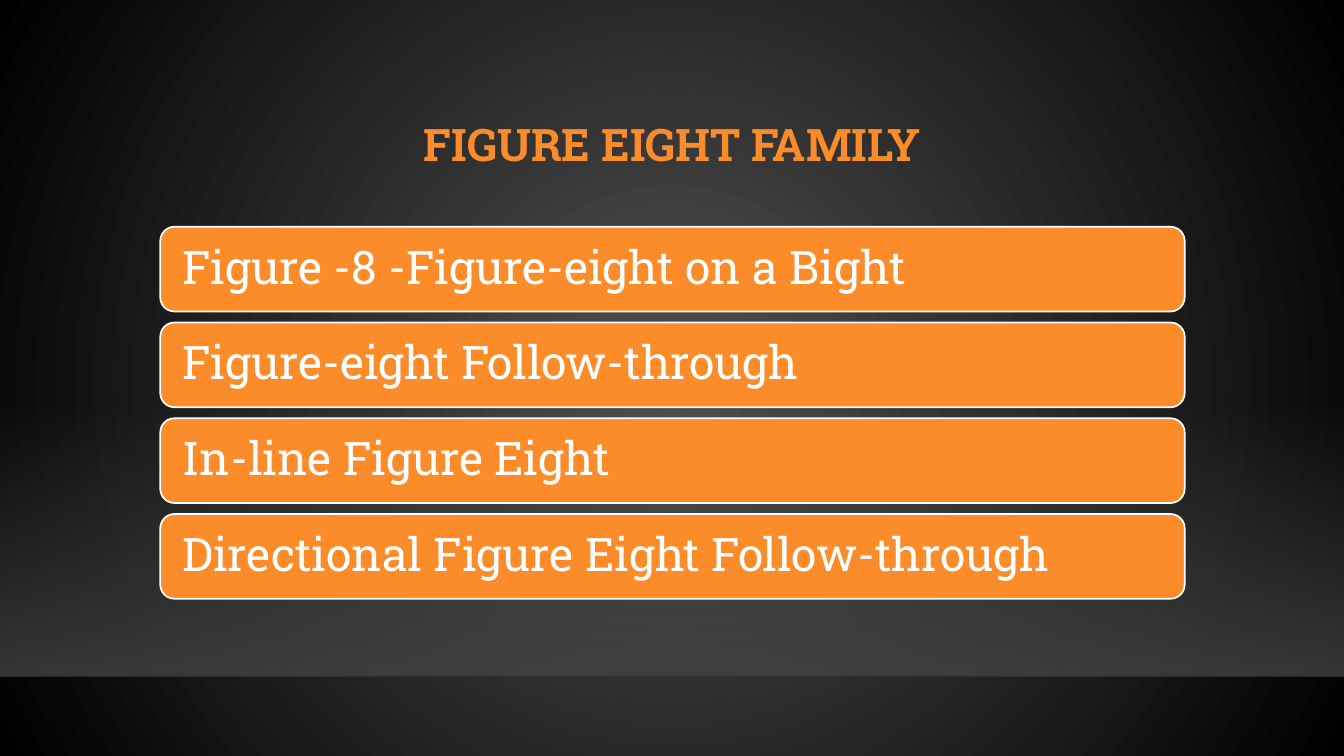
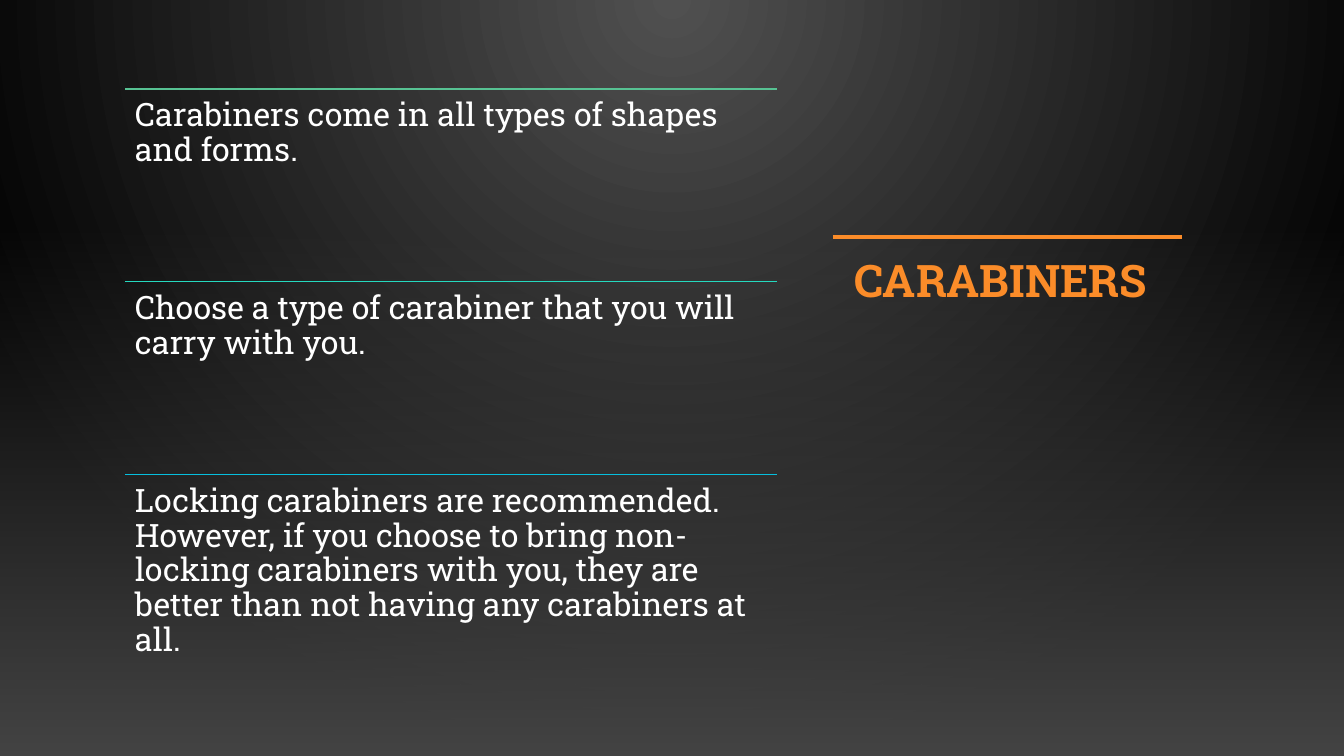
"""Build two dark slides on climbing knots and carabiners."""
from lxml import etree
from pptx import Presentation
from pptx.dml.color import RGBColor
from pptx.enum.shapes import MSO_CONNECTOR, MSO_SHAPE
from pptx.enum.text import MSO_ANCHOR, PP_ALIGN
from pptx.oxml import parse_xml
from pptx.oxml.ns import nsdecls, qn
from pptx.util import Inches, Pt

STRAIGHT = MSO_CONNECTOR.STRAIGHT
RECT, ROUNDED = MSO_SHAPE.RECTANGLE, MSO_SHAPE.ROUNDED_RECTANGLE
TOP, MIDDLE = MSO_ANCHOR.TOP, MSO_ANCHOR.MIDDLE
LEFT, CENTER = PP_ALIGN.LEFT, PP_ALIGN.CENTER

ORANGE = RGBColor(0xFB, 0x8C, 0x29)
WHITE = RGBColor(0xFF, 0xFF, 0xFF)
NEAR_BLACK = RGBColor(0x00, 0x00, 0x01)
BLACK = RGBColor(0x00, 0x00, 0x00)
GLOW = RGBColor(0x50, 0x50, 0x50)
FLOOR = RGBColor(0x45, 0x45, 0x45)
GREEN = RGBColor(0x57, 0xC2, 0x93)
TEAL = RGBColor(0x25, 0xD9, 0xBF)
CYAN = RGBColor(0x06, 0xBF, 0xDE)

WIDTH, HEIGHT = 13.33, 7.5
FONT = "Roboto Slab"
TITLE = {"size": Pt(32), "bold": True, "color": ORANGE}
KNOT = {"size": Pt(33), "color": WHITE}
NOTE = {"size": Pt(23), "color": WHITE}

KNOT_TITLE = "FIGURE EIGHT FAMILY"
KNOTS = [
    "Figure -8 -Figure-eight on a Bight",
    "Figure-eight Follow-through",
    "In-line Figure Eight",
    "Directional Figure Eight Follow-through",
]
CARABINER_TITLE = "CARABINERS"
CARABINERS = [
    ("Carabiners come in all types of shapes and forms.", GREEN),
    ("Choose a type of carabiner that you will carry with you.", TEAL),
    ("Locking carabiners are recommended. However, if you choose to bring "
     "non-locking carabiners with you, they are better than not having any "
     "carabiners at all.", CYAN),
]


def set_gradient(element, stops, direction):
    """Swap the first solid fill for a gradient of (position, colour, alpha) stops."""
    gs = "".join(
        f'<a:gs pos="{pos * 1000}"><a:srgbClr val="{color}">'
        f'<a:alpha val="{alpha * 1000}"/></a:srgbClr></a:gs>'
        for pos, color, alpha in stops)
    solid = next(element.iter(qn("a:solidFill")))
    solid.getparent().replace(solid, parse_xml(
        f'<a:gradFill {nsdecls("a")} rotWithShape="1"><a:gsLst>{gs}</a:gsLst>'
        f'{direction}</a:gradFill>'))


def add_backdrop(slide, focus):
    """Fill the background with a round glow; focus is left, top, right, bottom percent."""
    slide.background.fill.solid()
    sides = " ".join(f'{side}="{value * 1000}"' for side, value in zip("ltrb", focus))
    set_gradient(slide.element, [(0, GLOW, 100), (100, BLACK, 100)],
                 f'<a:path path="circle"><a:fillToRect {sides}/></a:path>')


def add_floor(slide, top, height, alpha):
    """Add a full-width band that fades in downwards."""
    sp = add_box(slide, RECT, (0, top, WIDTH, height), FLOOR)
    set_gradient(sp.element, [(0, FLOOR, 0), (100, FLOOR, alpha)],
                 '<a:lin ang="5400000" scaled="0"/>')


def add_box(slide, kind, at, fill, line=None):
    """Add a flat preset shape with an optional outline colour."""
    sp = slide.shapes.add_shape(kind, *map(Inches, at))
    sp.shadow.inherit = False
    sp.fill.solid()
    sp.fill.fore_color.rgb = fill
    if line is None:
        sp.line.fill.background()
    else:
        sp.line.color.rgb = line
        sp.line.width = Pt(1.25)
    return sp


def add_rule(slide, left, top, width, color, weight):
    """Add a flat horizontal line."""
    line = slide.shapes.add_connector(
        STRAIGHT, *map(Inches, (left, top, left + width, top)))
    line.line.color.rgb = color
    line.line.width = Pt(weight)
    etree.SubElement(line.element.spPr, qn("a:effectLst"))
    return line


def write(sp, text, style, align=LEFT, anchor=TOP, side=0.1, edge=0.1):
    """Write one wrapped paragraph into a shape."""
    tf = sp.text_frame
    frame = {"word_wrap": True, "vertical_anchor": anchor,
             "margin_left": Inches(side), "margin_right": Inches(side),
             "margin_top": Inches(edge), "margin_bottom": Inches(edge)}
    for name, value in frame.items():
        setattr(tf, name, value)
    p = tf.paragraphs[0]
    p.alignment, p.line_spacing = align, 0.9
    r = p.add_run()
    r.text = text
    r.font.name = FONT
    for name, value in style.items():
        if name == "color":
            r.font.color.rgb = value
        else:
            setattr(r.font, name, value)


def add_text(slide, at, *args, **kwargs):
    """Add a text box holding one paragraph."""
    write(slide.shapes.add_textbox(*map(Inches, at)), *args, **kwargs)


def build_knots(slide):
    """List the knots in equal rounded bars."""
    left, top, width, height, pitch = 1.59, 2.25, 10.16, 0.84, 0.95
    floor_top, floor_height = 3.96, 2.75
    add_backdrop(slide, (50, 50, 50, 50))
    add_floor(slide, floor_top, floor_height, 80)
    edge = add_rule(slide, 0, floor_top + floor_height, WIDTH, NEAR_BLACK, 1)
    color = next(edge.element.iter(qn("a:srgbClr")))
    etree.SubElement(color, qn("a:alpha"), val="20000")
    add_text(slide, (left, 0.88, width, 1.15), KNOT_TITLE, TITLE,
             align=CENTER, anchor=MIDDLE, edge=0.05)
    for i, knot in enumerate(KNOTS):
        bar = add_box(slide, ROUNDED, (left, top + i * pitch, width, height),
                      ORANGE, WHITE)
        write(bar, knot, KNOT, anchor=MIDDLE, side=0.18)


def build_carabiners(slide):
    """Stack ruled notes beside the title."""
    left, top, width, bottom = 1.24, 0.88, 6.47, 6.62
    floor_top = 2.21
    add_backdrop(slide, (43, 0, 43, 100))
    add_floor(slide, floor_top, HEIGHT - floor_top, 100)
    add_text(slide, (8.2, 2.52, 3.45, 4.1), CARABINER_TITLE, TITLE,
             align=CENTER, edge=0.05)
    add_rule(slide, 8.26, 2.35, 3.46, ORANGE, 2.5)
    pitch = (bottom - top) / len(CARABINERS)
    for i, (note, color) in enumerate(CARABINERS):
        y = top + i * pitch
        add_rule(slide, left, y, width, color, 1.25)
        add_text(slide, (left, y, width, pitch), note, NOTE)


def main():
    """Build and save the slides."""
    prs = Presentation()
    prs.slide_width, prs.slide_height = Inches(WIDTH), Inches(HEIGHT)
    for build in (build_knots, build_carabiners):
        build(prs.slides.add_slide(prs.slide_layouts[6]))
    prs.save("out.pptx")


if __name__ == "__main__":
    main()
